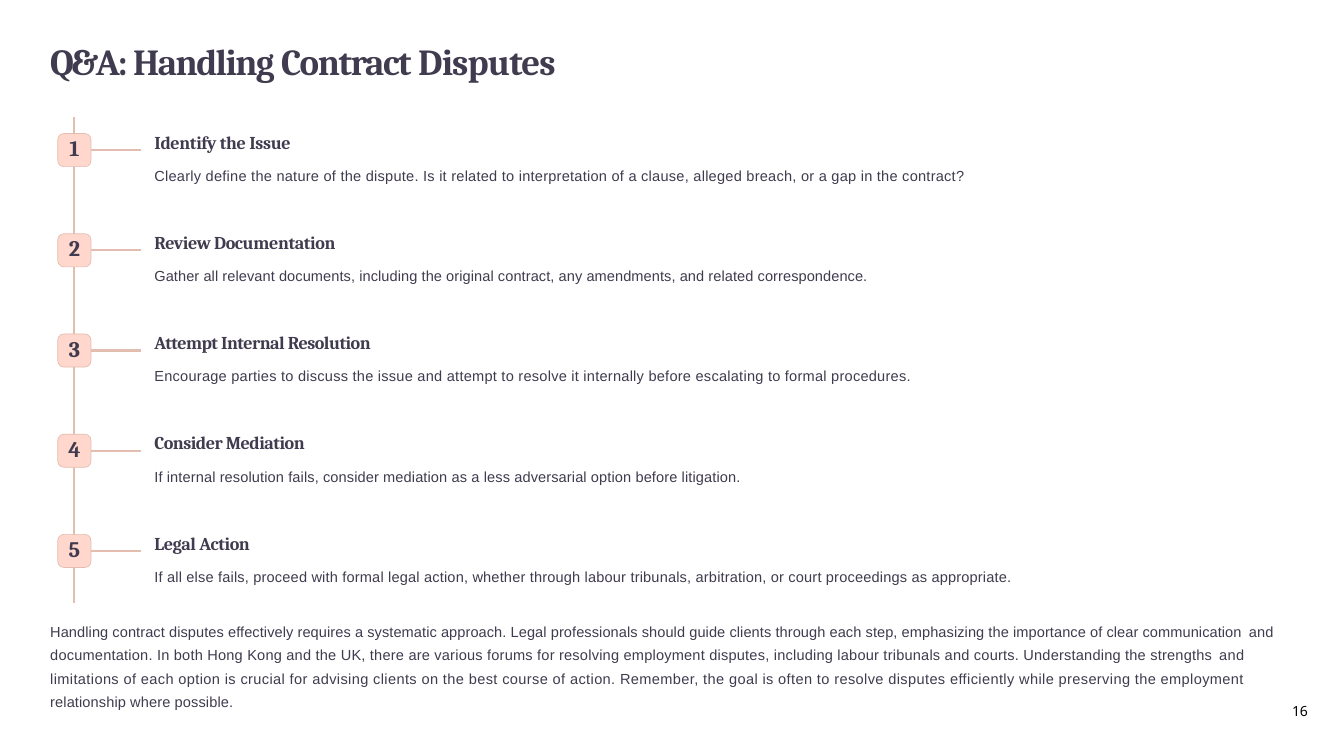
"""Build the slide on handling contract disputes: a five-step timeline."""
from lxml.etree import SubElement
from pptx import Presentation
from pptx.dml.color import RGBColor
from pptx.enum.shapes import MSO_CONNECTOR, MSO_SHAPE
from pptx.enum.text import MSO_ANCHOR, PP_ALIGN
from pptx.oxml.ns import qn
from pptx.util import Cm, Pt

COLORS = {"ink": "403B4E", "line": "E4BDB1", "badge": "FFD7CC", "page": "000000"}

TITLE = [("Q&A: ", -2.2), ("Handling ", -1.3), ("Contract ", -1.2), ("Disputes", -0.7)]
STEPS = [
    (("Identify the Issue", -0.29),
     ("Clearly define the nature of the dispute. Is it related to interpretation of a clause, "
      "alleged breach, or a gap in the contract?", 0.22)),
    (("Review Documentation", -0.31),
     ("Gather all relevant documents, including the original contract, any amendments, "
      "and related correspondence.", 0.08)),
    (("Attempt Internal Resolution", -0.42),
     ("Encourage parties to discuss the issue and attempt to resolve it internally "
      "before escalating to formal procedures.", 0.22)),
    (("Consider Mediation", -0.4),
     ("If internal resolution fails, consider mediation as a less adversarial option "
      "before litigation.", 0.11)),
    (("Legal Action", -0.3),
     ("If all else fails, proceed with formal legal action, whether through labour tribunals, "
      "arbitration, or court proceedings as appropriate.", 0.16)),
]
CLOSING = [
    ("Handling contract disputes effectively requires a systematic approach. Legal professionals "
     "should guide clients through each step, emphasizing the importance of clear communication ", 0.08),
    ("and documentation. In both Hong Kong and the UK, there are various forums for resolving "
     "employment disputes, including labour tribunals and courts. Understanding the strengths ", 0.2),
    ("and limitations of each option is crucial for advising clients on the best course of action. "
     "Remember, the goal is often to resolve disputes efficiently while preserving the employment ", 0.33),
    ("relationship where possible.", 0.1),
]
PAGE = [("16", -0.2)]

LEFT = 1.52
BADGE_LEFT, BADGE_TOP, BADGE_SIZE, PITCH = 1.75, 4.04, 1, 3.03
SPINE_X, SPINE_TOP, SPINE_BOTTOM = 2.25, 3.54, 18.24
ARM_END, STEP_LEFT, STEP_WIDTH = 4.27, 4.67, 27


def color(key):
    return RGBColor.from_string(COLORS[key])


def write(paragraph, pieces, size, font, bold=False, ink="ink", before=1):
    paragraph.space_before = Pt(before)
    for words, spacing in pieces:
        run = paragraph.add_run()
        run.text = words
        run.font.size, run.font.name, run.font.bold = Pt(size), font, bold
        run.font.color.rgb = color(ink)
        run._r.get_or_add_rPr().set("spc", str(round(spacing * 100)))


def add_text(slide, left, top, width, height):
    frame = slide.shapes.add_textbox(Cm(left), Cm(top), Cm(width), Cm(height)).text_frame
    frame.word_wrap = True
    frame.margin_left = frame.margin_right = frame.margin_bottom = 0
    frame.margin_top = Cm(0.03)
    return frame


def add_line(slide, x1, y1, x2, y2):
    line = slide.shapes.add_connector(MSO_CONNECTOR.STRAIGHT, Cm(x1), Cm(y1), Cm(x2), Cm(y2))
    line.line.color.rgb = color("line")
    line.line.width = Pt(1.8)
    SubElement(line._element.spPr, qn("a:effectLst"))
    return line


def add_badge(slide, number, top):
    badge = slide.shapes.add_shape(MSO_SHAPE.ROUNDED_RECTANGLE, Cm(BADGE_LEFT), Cm(top),
                                   Cm(BADGE_SIZE), Cm(BADGE_SIZE))
    badge.adjustments[0] = 0.18
    badge.shadow.inherit = False
    badge.fill.solid()
    badge.fill.fore_color.rgb = color("badge")
    badge.line.color.rgb = color("line")
    badge.line.width = Pt(0.6)
    frame = badge.text_frame
    frame.margin_left = frame.margin_right = frame.margin_top = 0
    frame.margin_bottom = Cm(0.14)
    frame.vertical_anchor = MSO_ANCHOR.MIDDLE
    frame.paragraphs[0].alignment = PP_ALIGN.CENTER
    write(frame.paragraphs[0], [(str(number), -0.5)], 19, "Cambria", True, before=0)
    return badge


def add_step(slide, number, heading, detail):
    top = BADGE_TOP + (number - 1) * PITCH
    middle = top + BADGE_SIZE / 2
    badge = add_badge(slide, number, top)
    arm = add_line(slide, BADGE_LEFT + BADGE_SIZE, middle, ARM_END, middle)
    arm.begin_connect(badge, 3)
    frame = add_text(slide, STEP_LEFT, top - 0.1, STEP_WIDTH, 1.68)
    write(frame.paragraphs[0], [heading], 15.5, "Cambria", True)
    write(frame.add_paragraph(), [detail], 12.5, "Arial", before=11.9)


def main():
    deck = Presentation()
    deck.slide_width, deck.slide_height = Cm(40.64), Cm(22.86)
    slide = deck.slides.add_slide(deck.slide_layouts[6])

    title = add_text(slide, LEFT, 1.14, 18.03, 1.4)
    write(title.paragraphs[0], TITLE, 31.5, "Cambria", True)

    add_line(slide, SPINE_X, SPINE_TOP, SPINE_X, SPINE_BOTTOM)
    for number, (heading, detail) in enumerate(STEPS, 1):
        add_step(slide, number, heading, detail)

    closing = add_text(slide, LEFT, 18.64, 37.21, 2.9).paragraphs[0]
    closing.line_spacing = 1.33
    write(closing, CLOSING, 12.5, "Arial")

    page = add_text(slide, 39.07, 21.21, 0.53, 0.58)
    write(page.paragraphs[0], PAGE, 12, "Noto Sans", ink="page")
    deck.save("out.pptx")


if __name__ == "__main__":
    main()
